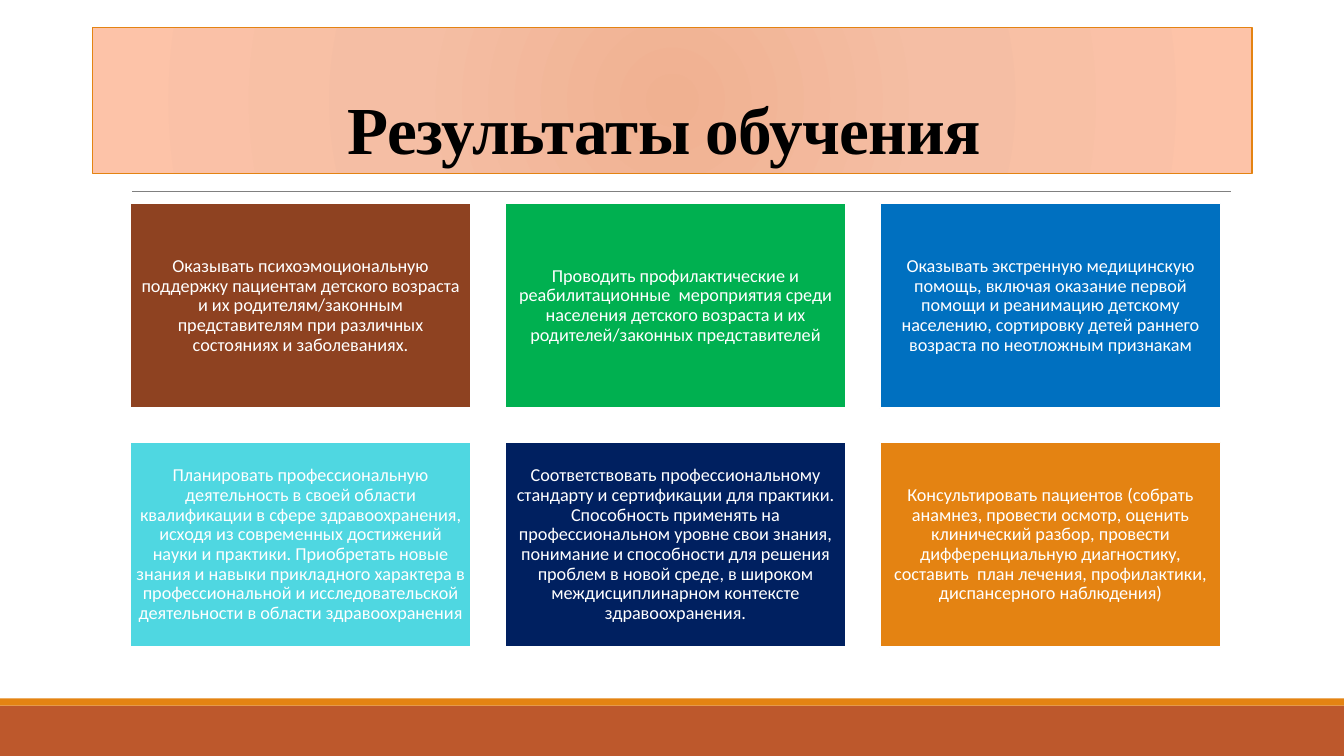
from dataclasses import dataclass
from typing import Any

import pptx
import pptx.dml.color
import pptx.enum.shapes
import pptx.enum.text
import pptx.oxml
import pptx.oxml.ns
import pptx.util

Pt = pptx.util.Pt
Anchor = pptx.enum.text.MSO_ANCHOR

COLOURS = {
    "white": "FFFFFF", "black": "000000", "grey": "808080",
    "rust": "BD582C", "orange": "E48312", "brown": "8E4221",
    "green": "00B050", "blue": "0070C0", "cyan": "4FD7E1", "navy": "002060",
}
TITLE_STOPS = {0: "F0B191", 45: "F5BEA4", 100: "FDC3A8"}

CARD_LEFT, CARD_TOP = 92.88, 145.44
CARD_WIDTH, CARD_HEIGHT = 243.36, 146.16
CARD_GAP = 24.48
COLUMNS = 3


@dataclass(frozen=True)
class Frame:
    left: float
    top: float
    width: float
    height: float

    def lengths(self) -> list[pptx.util.Length]:
        return [Pt(value) for value in (self.left, self.top, self.width, self.height)]


@dataclass(frozen=True)
class Band:
    frame: Frame
    colour: str


@dataclass(frozen=True)
class Outcome:
    colour: str
    text: str


BANDS = [
    Band(Frame(0, 504, 960, 36), "rust"),
    Band(Frame(0, 498.96, 960, 5.04), "orange"),
]
OUTCOMES = [
    Outcome("brown", "Оказывать психоэмоциональную поддержку пациентам детского возраста "
            "и их родителям/законным представителям при различных состояниях и заболеваниях."),
    Outcome("green", "Проводить профилактические и реабилитационные  мероприятия среди "
            "населения детского возраста и их родителей/законных представителей"),
    Outcome("blue", "Оказывать экстренную медицинскую помощь, включая оказание первой помощи "
            "и реанимацию детскому населению, сортировку детей раннего возраста "
            "по неотложным признакам"),
    Outcome("cyan", "Планировать профессиональную деятельность в своей области квалификации "
            "в сфере здравоохранения, исходя из современных достижений науки и практики. "
            "Приобретать новые знания и навыки прикладного характера в профессиональной "
            "и исследовательской деятельности в области здравоохранения"),
    Outcome("navy", "Соответствовать профессиональному стандарту и сертификации для практики. "
            "Способность применять на профессиональном уровне свои знания, понимание "
            "и способности для решения проблем в новой среде, в широком междисциплинарном "
            "контексте здравоохранения."),
    Outcome("orange", "Консультировать пациентов (собрать анамнез, провести осмотр, оценить "
            "клинический разбор, провести дифференциальную диагностику, составить  план "
            "лечения, профилактики, диспансерного наблюдения)"),
]


def rgb(name: str) -> pptx.dml.color.RGBColor:
    return pptx.dml.color.RGBColor.from_string(COLOURS[name])


def set_attributes(target: Any, values: dict[str, Any]) -> None:
    for name, value in values.items():
        setattr(target, name, value)


def set_line(item: Any, colour: str, width: float) -> None:
    item.line.color.rgb = rgb(colour)
    item.line.width = Pt(width)


def write_text(shape: Any, text: str, frame_format: dict[str, Any], spacing: float,
               font_format: dict[str, Any], colour: str) -> Any:
    """Fill the shape with one centred paragraph and return its run."""
    set_attributes(shape.text_frame, {"word_wrap": True, **frame_format})
    para = shape.text_frame.paragraphs[0]
    set_attributes(para, {"alignment": pptx.enum.text.PP_ALIGN.CENTER,
                          "line_spacing": spacing})
    span = para.add_run()
    span.text = text
    set_attributes(span.font, font_format)
    span.font.color.rgb = rgb(colour)
    return span


def add_rectangle(page: Any, frame: Frame, colour: str) -> Any:
    box = page.shapes.add_shape(pptx.enum.shapes.MSO_SHAPE.RECTANGLE, *frame.lengths())
    box.shadow.inherit = False
    box.fill.solid()
    box.fill.fore_color.rgb = rgb(colour)
    return box


def add_band(page: Any, band: Band) -> None:
    add_rectangle(page, band.frame, band.colour).line.fill.background()


def add_divider(page: Any) -> None:
    divider = page.shapes.add_connector(pptx.enum.shapes.MSO_CONNECTOR.STRAIGHT,
                                        Pt(94.32), Pt(136.8), Pt(879.12), Pt(136.8))
    set_line(divider, "grey", 0.5)
    properties = divider._element.spPr
    properties.append(properties.makeelement(pptx.oxml.ns.qn("a:effectLst")))


def fill_radial(shape: Any) -> None:
    """Give the shape a circular gradient of the title stops."""
    stops = "".join(
        f'<a:gs pos="{percent * 1000}"><a:srgbClr val="{colour}"/></a:gs>'
        for percent, colour in TITLE_STOPS.items())
    gradient = pptx.oxml.parse_xml(
        f'<a:gradFill {pptx.oxml.ns.nsdecls("a")} rotWithShape="1"><a:gsLst>{stops}</a:gsLst>'
        '<a:path path="circle"><a:fillToRect l="100000" t="100000" r="100000" b="100000"/>'
        '</a:path></a:gradFill>')
    shape.fill.solid()
    properties = shape._element.spPr
    properties.replace(properties.find(pptx.oxml.ns.qn("a:solidFill")), gradient)


def format_title(page: Any) -> None:
    title = page.shapes.title
    frame = Frame(66.24, 19.44, 828, 104.4)
    set_attributes(title, dict(zip(("left", "top", "width", "height"), frame.lengths())))
    fill_radial(title)
    set_line(title, "orange", 1)
    span = write_text(
        title, "Результаты обучения ",
        {"vertical_anchor": Anchor.BOTTOM, "auto_size": pptx.enum.text.MSO_AUTO_SIZE.NONE},
        0.85, {"size": Pt(48), "name": "Times New Roman", "bold": True}, "black")
    span._r.get_or_add_rPr().set("spc", "-50")


def add_outcome(page: Any, index: int, outcome: Outcome) -> None:
    row, column = divmod(index, COLUMNS)
    frame = Frame(CARD_LEFT + column * (CARD_WIDTH + CARD_GAP),
                  CARD_TOP + row * (CARD_HEIGHT + CARD_GAP), CARD_WIDTH, CARD_HEIGHT)
    card = add_rectangle(page, frame, outcome.colour)
    set_line(card, "white", 1.25)
    margins = {f"margin_{side}": Pt(3.6) for side in ("left", "top", "right", "bottom")}
    write_text(card, outcome.text, {"vertical_anchor": Anchor.MIDDLE, **margins},
               0.9, {"size": Pt(13), "name": "Calibri"}, "white")


def main() -> None:
    deck = pptx.Presentation()
    set_attributes(deck, {"slide_width": Pt(960), "slide_height": Pt(540)})
    page = deck.slides.add_slide(deck.slide_layouts.get_by_name("Title Only"))
    for band in BANDS:
        add_band(page, band)
    add_divider(page)
    format_title(page)
    for index, outcome in enumerate(OUTCOMES):
        add_outcome(page, index, outcome)
    deck.save("out.pptx")


if __name__ == "__main__":
    main()
